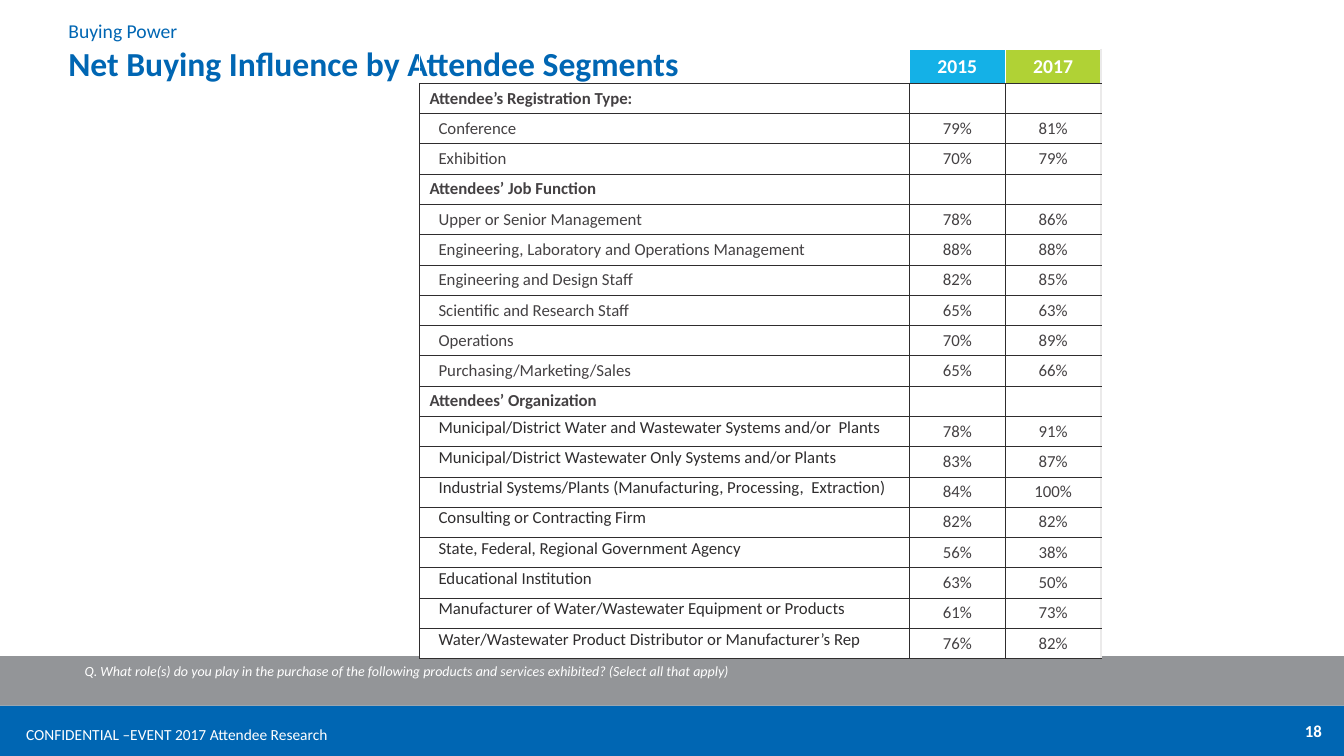
import pptx
import pptx.dml.color
import pptx.enum.shapes
import pptx.enum.text
import pptx.oxml
import pptx.oxml.ns
import pptx.util

ALIGN = pptx.enum.text.PP_ALIGN
ANCHOR = pptx.enum.text.MSO_ANCHOR
FONT = "Calibri"
BLUE, GREY, WHITE = "0066B3", "939598", "FFFFFF"
INK, DARK, PALE = "444143", "2F2D2E", "EBEAEA"

# The grid has 100 columns and rows to the inch; boxes are left, top, width, height.
WIDTH, HEIGHT = 1333, 750
FOOTER_HEIGHT, QUESTION_HEIGHT = 50, 49
FOOTER_TOP = HEIGHT - FOOTER_HEIGHT
QUESTION_TOP = FOOTER_TOP - QUESTION_HEIGHT
MARGIN = 58

BANDS = [
    ((0, FOOTER_TOP, WIDTH, FOOTER_HEIGHT), BLUE),
    ((0, QUESTION_TOP, WIDTH, QUESTION_HEIGHT), GREY),
]

HEADINGS = [
    ("Net Buying Influence by Attendee Segments", (MARGIN, 49, 1200, 32),
     {"size": 24, "bold": True, "color": BLUE}, ANCHOR.MIDDLE, ALIGN.LEFT, 0.9),
    ("Buying Power", (MARGIN, 14, 257, 35),
     {"size": 14, "color": BLUE}, ANCHOR.MIDDLE, ALIGN.LEFT, 0.9),
]

FOOTNOTES = [
    ("CONFIDENTIAL –EVENT 2017 Attendee Research", (16, FOOTER_TOP + 14, 760, 29),
     {"size": 11, "color": WHITE}, ANCHOR.TOP, ALIGN.LEFT, 1),
    ("18", (1021, FOOTER_TOP + 10, 300, 40),
     {"size": 12, "bold": True, "color": WHITE}, ANCHOR.TOP, ALIGN.RIGHT, 1),
    ("Q. What role(s) do you play in the purchase of the following products and services "
     "exhibited? (Select all that apply)", (74, QUESTION_TOP + 1, 1127, 28),
     {"size": 10, "italic": True, "color": WHITE}, ANCHOR.TOP, ALIGN.LEFT, 1),
]

YEARS = [("2015", "14B1E7"), ("2017", "B0D235")]

# Each section: heading, label colour, whether labels sit at the top, rows.
SECTIONS = [
    ("Attendee’s Registration Type:", INK, False, [
        ("Conference", "79%", "81%"),
        ("Exhibition", "70%", "79%"),
    ]),
    ("Attendees’ Job Function", INK, False, [
        ("Upper or Senior Management", "78%", "86%"),
        ("Engineering, Laboratory and Operations Management", "88%", "88%"),
        ("Engineering and Design Staff", "82%", "85%"),
        ("Scientific and Research Staff", "65%", "63%"),
        ("Operations", "70%", "89%"),
        ("Purchasing/Marketing/Sales", "65%", "66%"),
    ]),
    ("Attendees’ Organization", DARK, True, [
        ("Municipal/District Water and Wastewater Systems and/or  Plants", "78%", "91%"),
        ("Municipal/District Wastewater Only Systems and/or Plants", "83%", "87%"),
        ("Industrial Systems/Plants (Manufacturing, Processing,  Extraction)", "84%", "100%"),
        ("Consulting or Contracting Firm", "82%", "82%"),
        ("State, Federal, Regional Government Agency", "56%", "38%"),
        ("Educational Institution", "63%", "50%"),
        ("Manufacturer of Water/Wastewater Equipment or Products", "61%", "73%"),
        ("Water/Wastewater Product Distributor or Manufacturer’s Rep", "76%", "82%"),
    ]),
]
TABLE_LEFT, TABLE_TOP = 416, 49
COLUMN_WIDTHS = [486, 95, 95]
HEADER_ROW, BODY_ROW = 29, 26
INDENT = 19


def grid(cells):
    return pptx.util.Inches(cells / 100)


def rgb(color):
    return pptx.dml.color.RGBColor.from_string(color)


def write(paragraph, text, style):
    """Add text in the given format; an empty paragraph only keeps the size."""
    if not text:
        mark = paragraph._p.get_or_add_endParaRPr()
        mark.set("sz", str(style["size"] * 100))
        return
    span = paragraph.add_run()
    span.text = text
    formats = {"name": FONT, "bold": False, **style}
    formats["size"] = pptx.util.Pt(formats["size"])
    span.font.color.rgb = rgb(formats.pop("color"))
    for key, value in formats.items():
        setattr(span.font, key, value)


def add_band(page, box, color):
    band = page.shapes.add_shape(
        pptx.enum.shapes.MSO_SHAPE.RECTANGLE, *map(grid, box))
    band.shadow.inherit = False
    band.fill.solid()
    band.fill.fore_color.rgb = rgb(color)
    band.line.fill.background()


def add_text(page, text, box, style, anchor, align, spacing):
    frame = page.shapes.add_textbox(*map(grid, box)).text_frame
    frame.word_wrap = True
    frame.vertical_anchor = anchor
    para = frame.paragraphs[0]
    para.alignment = align
    para.line_spacing = spacing
    write(para, text, style)


def set_borders(cell, borders):
    """Draw the cell's sides, given as side: (colour, points)."""
    properties = cell._tc.get_or_add_tcPr()
    for side in "LRTB":
        color, points = borders[side]
        properties.append(pptx.oxml.parse_xml(
            f'<a:ln{side} {pptx.oxml.ns.nsdecls("a")} w="{int(points * 12700)}">'
            f'<a:solidFill><a:srgbClr val="{color}"/></a:solidFill></a:ln{side}>'))


def fill_cell(cell, text, style, borders, fill=WHITE, align=ALIGN.CENTER, margins=None,
              anchor=ANCHOR.MIDDLE):
    set_borders(cell, borders)
    if fill:
        cell.fill.solid()
        cell.fill.fore_color.rgb = rgb(fill)
    else:
        cell.fill.background()
    cell.vertical_anchor = anchor
    for side, size in (margins or {}).items():
        setattr(cell, f"margin_{side}", grid(size))
    para = cell.text_frame.paragraphs[0]
    para.alignment = align
    write(para, text, style)


def add_table(page):
    row_count = 1 + sum(1 + len(rows) for *_, rows in SECTIONS)
    height = HEADER_ROW + BODY_ROW * (row_count - 1)
    table = page.shapes.add_table(
        row_count, len(COLUMN_WIDTHS),
        *map(grid, (TABLE_LEFT, TABLE_TOP, sum(COLUMN_WIDTHS), height))).table
    table.first_row = table.horz_banding = False
    for column, width in zip(table.columns, COLUMN_WIDTHS):
        column.width = grid(width)
    for number, row in enumerate(table.rows):
        row.height = grid(BODY_ROW if number else HEADER_ROW)

    thin, white, pale = (DARK, 0.25), (WHITE, 1), (PALE, 1)
    inner = dict.fromkeys("LRTB", thin)
    outer = {**inner, "R": pale}
    header = {**dict.fromkeys("LRT", white), "B": thin}
    header_style = {"size": 14, "bold": True, "color": WHITE}
    section_style = {"size": 12, "bold": True, "color": INK}
    value_style = {"size": 12, "color": INK}

    fill_cell(table.cell(0, 0), "", header_style, header, fill=None)
    for column, (year, color) in enumerate(YEARS, 1):
        edges = {**header, "R": pale} if column == len(YEARS) else header
        fill_cell(table.cell(0, column), year, header_style, edges, fill=color)

    number = 1
    for heading, color, at_top, rows in SECTIONS:
        for label, *values in [(heading, "", ""), *rows]:
            is_heading = label == heading
            label_format = {}
            if not is_heading:
                label_format["margins"] = {"left": INDENT}
                if at_top:
                    label_format["margins"].update(right=1, top=1, bottom=0)
                    label_format["anchor"] = ANCHOR.TOP
            label_style = section_style if is_heading else {"size": 12, "color": color}
            fill_cell(table.cell(number, 0), label, label_style, inner,
                      align=ALIGN.LEFT, **label_format)
            for column, value in enumerate(values, 1):
                edges = outer if column == len(values) else inner
                fill_cell(table.cell(number, column), value, value_style, edges)
            number += 1


def main():
    deck = pptx.Presentation()
    deck.slide_width, deck.slide_height = grid(WIDTH), grid(HEIGHT)
    page = deck.slides.add_slide(deck.slide_layouts[6])
    for band in BANDS:
        add_band(page, *band)
    for heading in HEADINGS:
        add_text(page, *heading)
    add_table(page)
    for footnote in FOOTNOTES:
        add_text(page, *footnote)
    deck.save("out.pptx")


if __name__ == "__main__":
    main()
